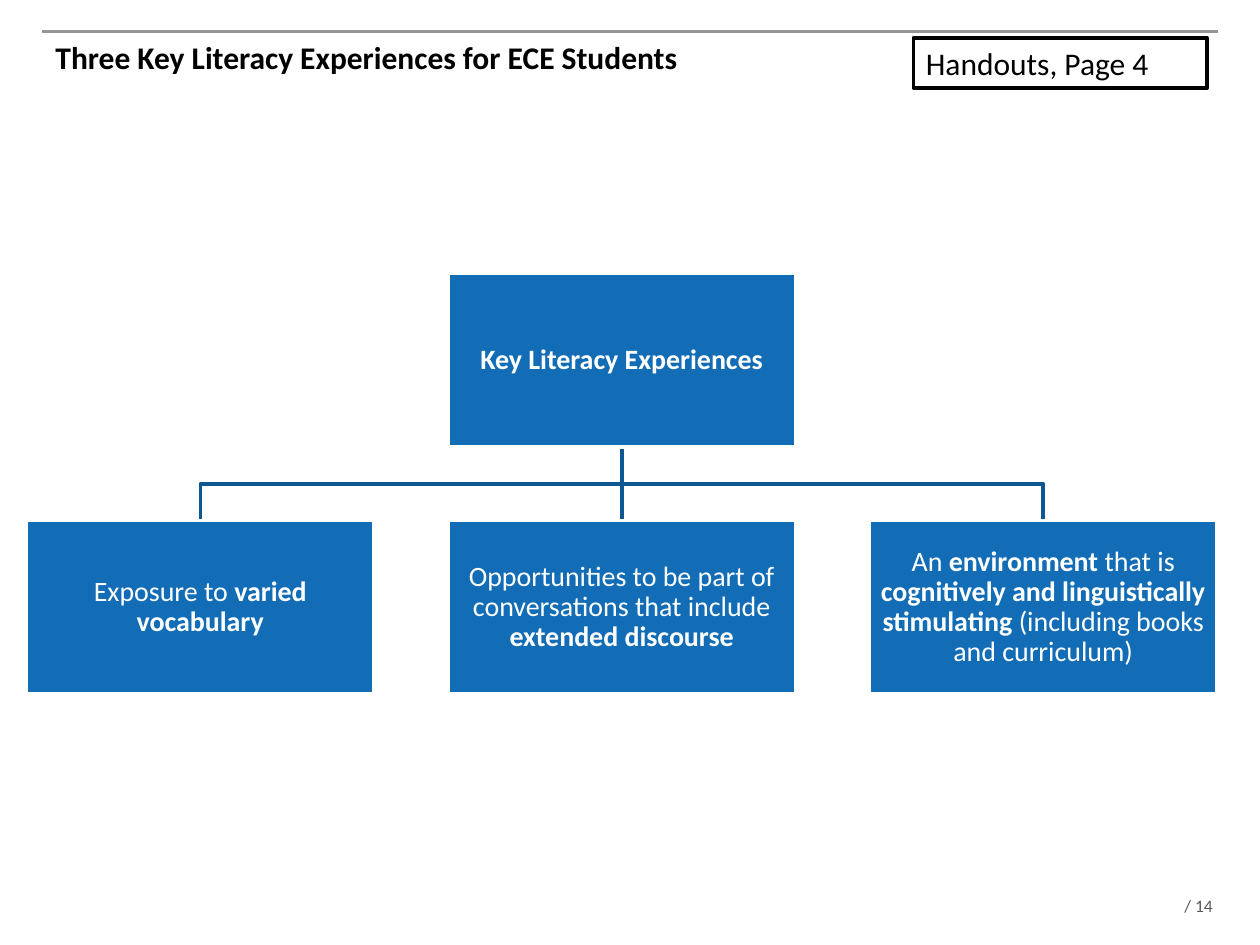
from lxml import etree
from pptx import Presentation
from pptx.dml.color import RGBColor
from pptx.enum.shapes import MSO_CONNECTOR, MSO_SHAPE
from pptx.enum.text import MSO_ANCHOR, MSO_AUTO_SIZE, PP_ALIGN
from pptx.oxml.ns import qn
from pptx.util import Inches, Pt

STRAIGHT = MSO_CONNECTOR.STRAIGHT
RECT = MSO_SHAPE.RECTANGLE
TOP, MIDDLE = MSO_ANCHOR.TOP, MSO_ANCHOR.MIDDLE
LEFT, CENTER = PP_ALIGN.LEFT, PP_ALIGN.CENTER
NO_AUTOFIT = MSO_AUTO_SIZE.NONE

BLACK = RGBColor(0x00, 0x00, 0x00)
WHITE = RGBColor(0xFF, 0xFF, 0xFF)
BLUE = RGBColor(0x12, 0x6D, 0xB6)
DARK_BLUE = RGBColor(0x0E, 0x57, 0x92)
RULE_GRAY = RGBColor(0x96, 0x96, 0x96)
TEXT_GRAY = RGBColor(0x59, 0x59, 0x59)

BOX_W, BOX_H = Inches(2.76), Inches(1.38)
ROOT_Y, CHILD_Y = Inches(2.17), Inches(4.13)
CHART_LEFT, CHART_RIGHT = Inches(0.21), Inches(9.66)

ROOT = [("Key Literacy Experiences", True)]
EXPERIENCES = [
    [("Exposure to ", False), ("varied vocabulary", True)],
    [("Opportunities to be part of conversations that include ", False),
     ("extended discourse", True)],
    [("An ", False), ("environment", True), (" that is ", False),
     ("cognitively and linguistically stimulating ", True),
     ("(including books and curriculum)", False)],
]


class SlideBuilder:
    font = "Calibri"
    line_width = Pt(2)

    def __init__(self, slide):
        self.slide = slide
        self.shapes = slide.shapes

    def fill_text(self, tf, runs, size, color, align=LEFT, anchor=TOP, inset=None):
        tf.auto_size = NO_AUTOFIT
        tf.vertical_anchor = anchor
        if inset is not None:
            tf.margin_left = tf.margin_right = inset
            tf.margin_top = tf.margin_bottom = inset
        p = tf.paragraphs[0]
        p.alignment = align
        for text, bold in runs:
            r = p.add_run()
            r.text = text
            r.font.name = self.font
            r.font.size = Pt(size)
            r.font.bold = bold
            r.font.color.rgb = color
        return p

    def stroke(self, sp, color):
        sp.line.color.rgb = color
        sp.line.width = self.line_width

    def title(self, text, x, y, w, h):
        sp = self.shapes.title
        sp.left, sp.top, sp.width, sp.height = x, y, w, h
        self.fill_text(sp.text_frame, [(text, True)], 18, BLACK)

    def text(self, text, x, y, w, h, size, color):
        tf = self.shapes.add_textbox(x, y, w, h).text_frame
        tf.word_wrap = True
        self.fill_text(tf, [(text, False)], size, color, inset=0)

    def rect(self, x, y, w, h, fill, line):
        sp = self.shapes.add_shape(RECT, x, y, w, h)
        sp.shadow.inherit = False
        sp.fill.solid()
        sp.fill.fore_color.rgb = fill
        self.stroke(sp, line)
        sp.text_frame.word_wrap = True
        return sp

    def node(self, runs, x, y):
        sp = self.rect(x, y, BOX_W, BOX_H, BLUE, WHITE)
        p = self.fill_text(sp.text_frame, runs, 16, WHITE, CENTER, MIDDLE, Inches(0.01))
        p.line_spacing = 0.9
        return sp

    def label(self, text, x, y, w, h):
        sp = self.rect(x, y, w, h, WHITE, BLACK)
        self.fill_text(sp.text_frame, [(text, False)], 18, BLACK)

    def line(self, x1, y1, x2, y2, color):
        cn = self.shapes.add_connector(STRAIGHT, x1, y1, x2, y2)
        self.stroke(cn, color)
        etree.SubElement(cn._element.spPr, qn("a:effectLst"))
        return cn

    def elbow(self, x1, y1, x2, y2, color):
        mid = (y1 + y2) // 2
        fb = self.shapes.build_freeform(x1, y1)
        fb.add_line_segments([(x1, mid), (x2, mid), (x2, y2)], close=False)
        sp = fb.convert_to_shape()
        sp.shadow.inherit = False
        sp.fill.background()
        self.stroke(sp, color)
        return sp

    def branch(self, parent, child):
        x1, y1 = parent.left + parent.width // 2, parent.top + parent.height
        x2, y2 = child.left + child.width // 2, child.top
        if x1 == x2:
            sp = self.line(x1, y1, x2, y2, DARK_BLUE)
            sp.begin_connect(parent, 2)
            sp.end_connect(child, 0)
        else:
            sp = self.elbow(x1, y1, x2, y2, DARK_BLUE)
        parent._element.addprevious(sp._element)


def main():
    prs = Presentation()
    prs.slide_width, prs.slide_height = Inches(10), Inches(7.5)
    s = SlideBuilder(prs.slides.add_slide(prs.slide_layouts[5]))

    s.text("/ 14", Inches(9.4), Inches(7.1), Inches(0.6), Inches(0.17), 10, TEXT_GRAY)
    s.line(Inches(0.33), Inches(0.25), Inches(9.67), Inches(0.25), RULE_GRAY)
    s.title("Three Key Literacy Experiences for ECE Students",
            Inches(0.34), Inches(0.25), Inches(9.32), Inches(0.92))

    step = (CHART_RIGHT - CHART_LEFT - BOX_W) // (len(EXPERIENCES) - 1)
    root = s.node(ROOT, CHART_LEFT + step, ROOT_Y)
    for i, runs in enumerate(EXPERIENCES):
        child = s.node(runs, CHART_LEFT + i * step, CHILD_Y)
        s.branch(root, child)

    s.label("Handouts, Page 4", Inches(7.25), Inches(0.3), Inches(2.33), Inches(0.4))
    prs.save("out.pptx")


if __name__ == "__main__":
    main()
